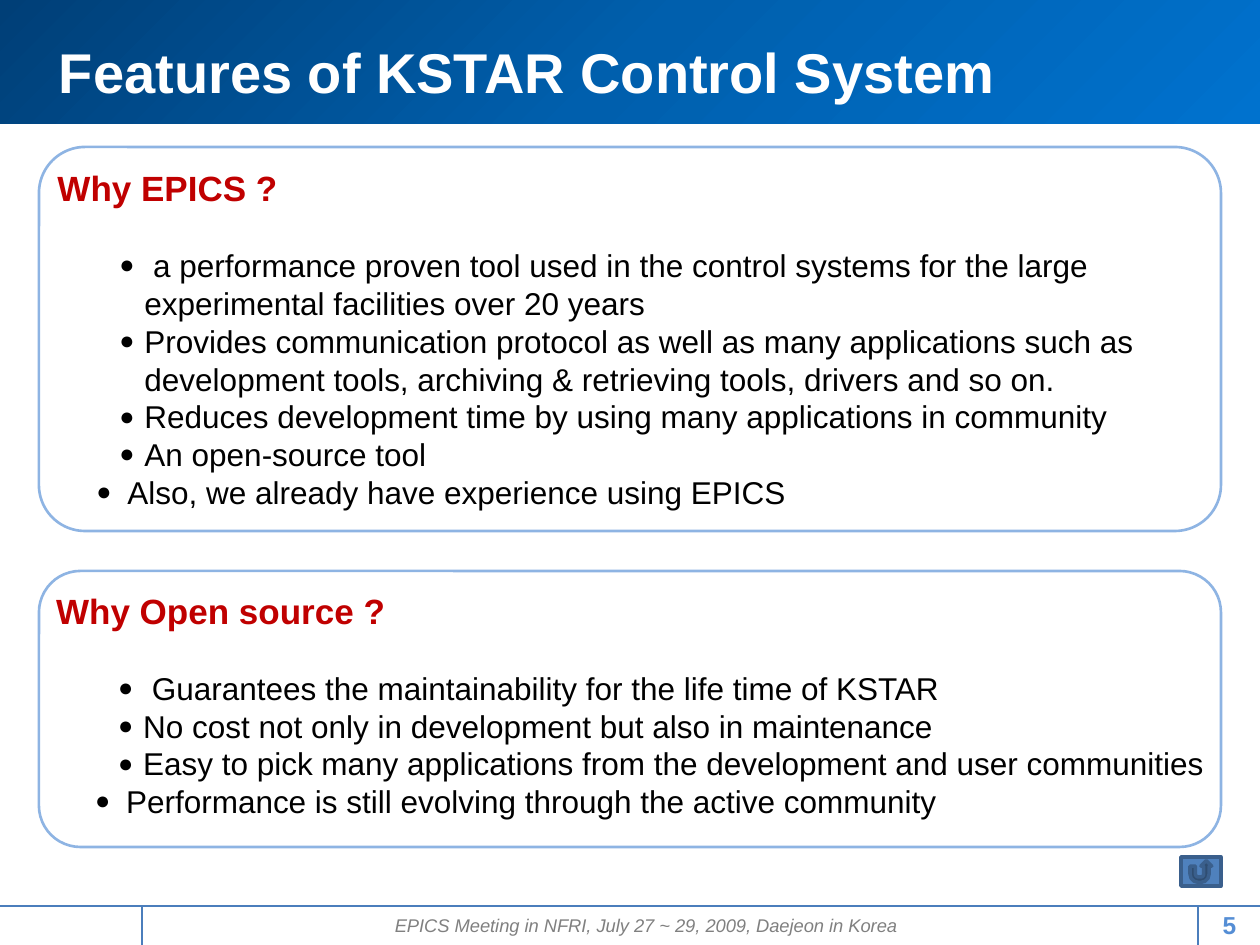
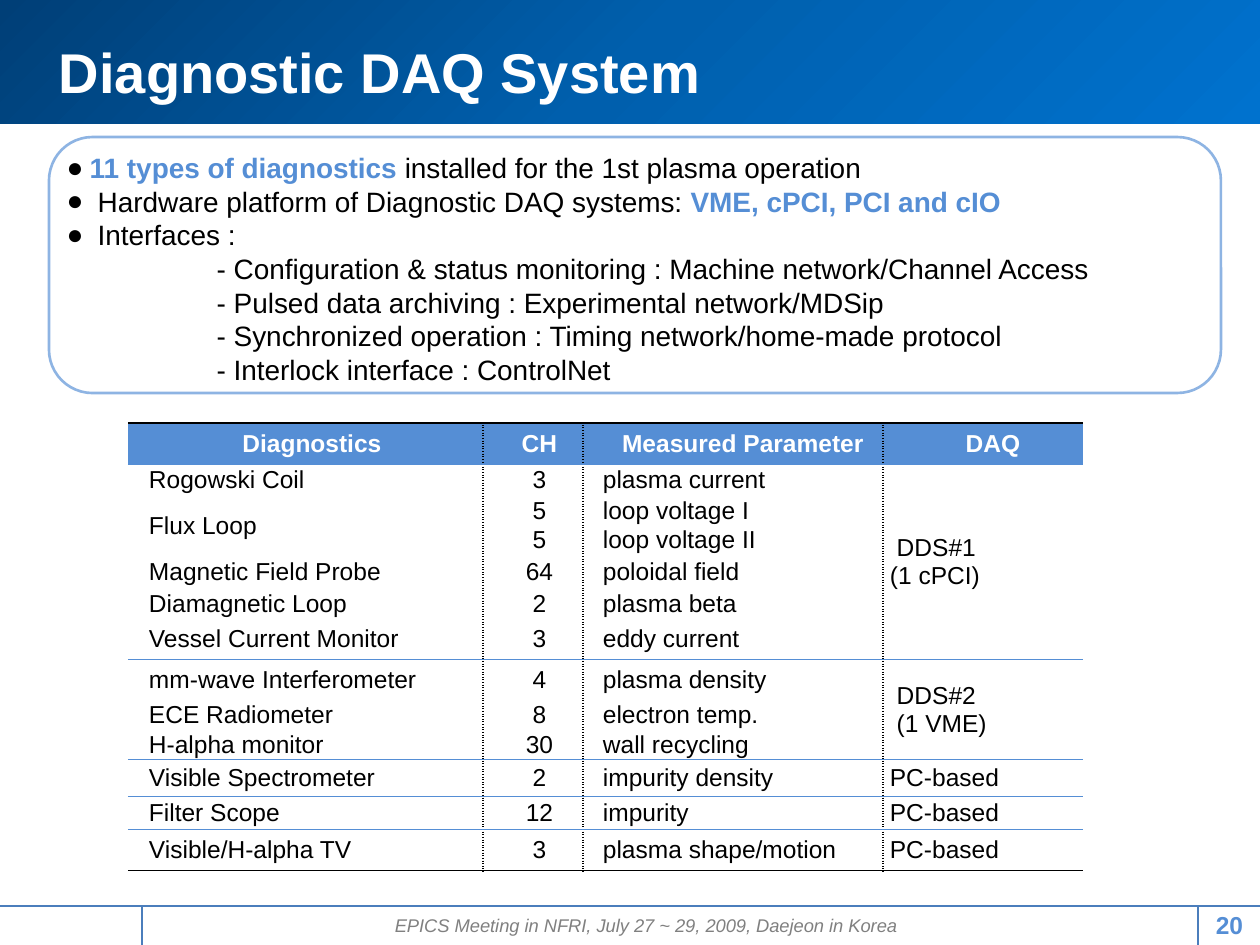
"""Builds two slides on the KSTAR control and data acquisition systems."""
from copy import deepcopy

from lxml.etree import SubElement
from pptx import Presentation
from pptx.dml.color import RGBColor
from pptx.enum.shapes import MSO_CONNECTOR, MSO_SHAPE
from pptx.enum.text import MSO_ANCHOR, MSO_AUTO_SIZE, PP_ALIGN
from pptx.oxml.ns import qn
from pptx.util import Inches, Pt

WHITE = RGBColor(0xFF, 0xFF, 0xFF)
BLACK = RGBColor(0x00, 0x00, 0x00)
RED = RGBColor(0xC0, 0x00, 0x00)
GRAY = RGBColor(0x80, 0x80, 0x80)
BLUE = RGBColor(0x55, 0x8E, 0xD5)
PANEL_LINE = RGBColor(0x8E, 0xB4, 0xE3)
FOOTER_LINE = RGBColor(0x4B, 0x7E, 0xBC)
BUTTON_FILL = RGBColor(0x4F, 0x81, 0xBD)
BUTTON_LINE = RGBColor(0x3A, 0x5F, 0x8C)
BAND_STOPS = [
    (0, RGBColor(0x00, 0x3F, 0x77)),
    (0.5, RGBColor(0x00, 0x5F, 0xAD)),
    (1, RGBColor(0x00, 0x72, 0xCE)),
]

FONT = "Arial"
SCALE = Inches(1) / 126
WIDTH, HEIGHT = 1260, 945
FOOTER_TOP = 906
FOOTER = "EPICS Meeting in NFRI, July 27 ~ 29, 2009, Daejeon in Korea"

EPICS_REASONS = [
    " a performance proven tool used in the control systems for the large "
    "experimental facilities over 20 years",
    "Provides communication protocol as well as many applications such as "
    "development tools, archiving & retrieving tools, drivers and so on.",
    "Reduces development time by using many applications in community",
    "An open-source tool",
    "Also, we already have experience using EPICS",
]
OPEN_SOURCE_REASONS = [
    " Guarantees the maintainability for the life time of KSTAR",
    "No cost not only in development but also in maintenance",
    "Easy to pick many applications from the development and user communities",
    "Performance is still evolving through the active community",
]
INTERFACES = [
    "- Configuration & status monitoring : Machine network/Channel Access",
    "- Pulsed data archiving : Experimental network/MDSip",
    "- Synchronized operation : Timing network/home-made protocol",
    "- Interlock interface : ControlNet",
]
DIAGNOSTICS = [
    ("Diagnostics", "CH", "Measured Parameter", "DAQ"),
    ("Rogowski Coil", "3", "plasma current", " DDS#1\n(1 cPCI)"),
    ("Flux Loop", "5", "loop voltage I", ""),
    ("", "5", "loop voltage II", ""),
    ("Magnetic Field Probe", "64", "poloidal field", ""),
    ("Diamagnetic Loop", "2", "plasma beta", ""),
    ("Vessel Current Monitor", "3", "eddy current", ""),
    ("mm-wave Interferometer", "4", "plasma density", " DDS#2\n (1 VME)"),
    ("ECE Radiometer", "8", "electron temp.", ""),
    ("H-alpha monitor", "30", "wall recycling", ""),
    ("Visible Spectrometer", "2", "impurity density", "PC-based"),
    ("Filter Scope", "12", "impurity", "PC-based"),
    ("Visible/H-alpha TV", "3", "plasma shape/motion", "PC-based"),
]
COLUMN_WIDTHS = [355, 100, 300, 200]
ROW_HEIGHTS = [41, 33, 29, 29, 35, 29, 41, 41, 29, 30, 37, 33, 41]
MERGES = [(2, 0, 3, 0), (1, 3, 6, 3), (7, 3, 9, 3)]
HEADER_INSETS = [13, 13, 20, 20]
BODY_INSETS = [21, 13, 20, 7]
DOTTED = (BLACK, 1, "sysDot")
EDGE = (BLACK, 1, "solid")
RULE = (BLUE, 0.5, "solid")
ROW_RULES = {0: EDGE, 1: RULE, 7: RULE, 10: RULE, 11: RULE, 12: RULE, 13: EDGE}


def px(length):
    """Turn px into EMU."""
    return round(length * SCALE)


class SlideBuilder:
    """Holds the shared style and the slide being drawn."""

    def __init__(self):
        """Open an empty deck of the right size."""
        self.deck = Presentation()
        self.deck.slide_width = px(WIDTH)
        self.deck.slide_height = px(HEIGHT)
        self.page = None

    def start(self, title, number):
        """Add a page with its band, title and footer."""
        self.page = self.deck.slides.add_slide(self.deck.slide_layouts[5])
        self.band()
        self.title(title)
        self.line(0, FOOTER_TOP, WIDTH, FOOTER_TOP)
        for x in (142, 1198):
            self.line(x, FOOTER_TOP, x, HEIGHT)
        self.label(383, 908, 527, 34, FOOTER, 10.5, GRAY, italic=True)
        self.label(1200, 905, 59, 39, number, 14, BLUE, bold=True)

    def shape(self, kind, left, top, width, height):
        """Add a preset shape without shadow."""
        box = self.page.shapes.add_shape(kind, px(left), px(top), px(width), px(height))
        box.shadow.inherit = False
        return box

    def band(self):
        """Draw the gradient title band."""
        box = self.shape(MSO_SHAPE.RECTANGLE, 0, 0, WIDTH, 124)
        box.line.fill.background()
        box.fill.gradient()
        box.fill.gradient_angle = 315
        stops = box.element.spPr.find(qn("a:gradFill")).find(qn("a:gsLst"))
        stops.insert(1, deepcopy(stops[0]))
        for stop, (position, color) in zip(box.fill.gradient_stops, BAND_STOPS):
            stop.position = position
            stop.color.rgb = color

    def title(self, text):
        """Fill the title placeholder and lift it above the band."""
        box = self.page.shapes.title
        box.left, box.top, box.width, box.height = 0, px(39), px(WIDTH), px(64)
        self.frame(box, (59, 0, 0, 0), MSO_ANCHOR.MIDDLE)
        para = self.para(box.text_frame, [(text, WHITE, True)], 32)
        para.alignment = PP_ALIGN.LEFT
        box.element.getparent().append(box.element)

    def line(self, x1, y1, x2, y2):
        """Draw a thin footer line."""
        rule = self.page.shapes.add_connector(
            MSO_CONNECTOR.STRAIGHT, px(x1), px(y1), px(x2), px(y2))
        rule.line.color.rgb = FOOTER_LINE
        rule.line.width = Pt(0.75)
        SubElement(rule.element.spPr, qn("a:effectLst"))

    def label(self, left, top, width, height, text, size, color, bold=False, italic=False):
        """Add a centred one-line text box."""
        box = self.page.shapes.add_textbox(px(left), px(top), px(width), px(height))
        self.frame(box, (0, 0, 0, 0), MSO_ANCHOR.MIDDLE)
        para = self.para(box.text_frame, [(text, color, bold)], size)
        para.alignment = PP_ALIGN.CENTER
        para.runs[0].font.italic = italic

    def panel(self, left, top, width, height, corner, top_inset):
        """Add a rounded outline and return its text frame."""
        box = self.shape(MSO_SHAPE.ROUNDED_RECTANGLE, left, top, width, height)
        box.adjustments[0] = corner
        box.fill.background()
        box.line.color.rgb = PANEL_LINE
        box.line.width = Pt(1.5)
        return self.frame(box, (5, top_inset, 0, 0), MSO_ANCHOR.TOP)

    def return_button(self, left, top, width, height):
        """Add the return button."""
        box = self.shape(MSO_SHAPE.ACTION_BUTTON_RETURN, left, top, width, height)
        box.fill.solid()
        box.fill.fore_color.rgb = BUTTON_FILL
        box.line.color.rgb = BUTTON_LINE
        box.line.width = Pt(2)

    def frame(self, box, insets, anchor):
        """Set up the text frame of a box."""
        frame = box.text_frame
        frame.word_wrap = True
        frame.auto_size = MSO_AUTO_SIZE.NONE
        frame.vertical_anchor = anchor
        (frame.margin_left, frame.margin_top,
         frame.margin_right, frame.margin_bottom) = map(px, insets)
        return frame

    def para(self, frame, spans, size, left=0, hang=0, bullet=0, leading=0):
        """Add a paragraph of (text, colour, bold) runs, with a bullet size in percent."""
        para = frame.paragraphs[0]
        if para.runs:
            para = frame.add_paragraph()
        para.alignment = PP_ALIGN.LEFT
        properties = para._p.get_or_add_pPr()
        properties.set("marL", str(px(left)))
        properties.set("indent", str(-px(hang)))
        if bullet:
            color = SubElement(properties, qn("a:buClr"))
            SubElement(color, qn("a:srgbClr"), val=str(BLACK))
            SubElement(properties, qn("a:buSzPct"), val=str(bullet * 1000))
            SubElement(properties, qn("a:buFont"), typeface=FONT)
            SubElement(properties, qn("a:buChar"), char="●")
        else:
            SubElement(properties, qn("a:buNone"))
        if leading:
            para.line_spacing = Pt(leading)
        for text, color, bold in spans:
            span = para.add_run()
            span.text = text
            span.font.name = FONT
            span.font.size = Pt(size)
            span.font.color.rgb = color
            span.font.bold = bold
        return para

    def reasons(self, top, height, corner, heading, items):
        """Add a panel with a red heading and bulleted reasons."""
        frame = self.panel(39, top, 1182, height, corner, 6)
        para = self.para(frame, [(heading, RED, True)], 20, leading=24)
        para.space_after = Pt(21.6)
        for item in items:
            left, hang = (70, 31) if item is items[-1] else (87, 25)
            self.para(frame, [(item, BLACK, False)], 18, left, hang, 80, 21.6)

    def border(self, cell, side, style):
        """Draw one cell edge, or clear it when there is no style."""
        properties = cell._tc.get_or_add_tcPr()
        edge = SubElement(properties, qn(f"a:ln{side}"))
        if style is None:
            edge.set("w", "0")
            SubElement(edge, qn("a:noFill"))
            return
        color, width, dash = style
        edge.set("w", str(Pt(width)))
        fill = SubElement(edge, qn("a:solidFill"))
        SubElement(fill, qn("a:srgbClr"), val=str(color))
        SubElement(edge, qn("a:prstDash"), val=dash)

    def table(self, left, top, rows):
        """Add the table of diagnostics."""
        table = self.page.shapes.add_table(
            len(rows), len(COLUMN_WIDTHS), px(left), px(top),
            px(sum(COLUMN_WIDTHS)), px(sum(ROW_HEIGHTS))).table
        table.first_row = table.horz_banding = False
        for column, width in zip(table.columns, COLUMN_WIDTHS):
            column.width = px(width)
        for row, height in zip(table.rows, ROW_HEIGHTS):
            row.height = px(height)
        for top_row, left_column, bottom_row, right_column in MERGES:
            table.cell(top_row, left_column).merge(table.cell(bottom_row, right_column))
        for r, row in enumerate(rows):
            for c, text in enumerate(row):
                self.cell(table.cell(r, c), r, c, text)

    def cell(self, cell, r, c, text):
        """Format and fill one table cell."""
        header = r == 0
        bottom = r + (cell.span_height if cell.is_merge_origin else 1)
        self.border(cell, "L", DOTTED if c else None)
        self.border(cell, "R", DOTTED if c < len(COLUMN_WIDTHS) - 1 else None)
        self.border(cell, "T", ROW_RULES.get(r))
        self.border(cell, "B", ROW_RULES.get(bottom))
        cell.fill.solid()
        cell.fill.fore_color.rgb = BLUE if header else WHITE
        cell.vertical_anchor = MSO_ANCHOR.MIDDLE
        cell.margin_top = cell.margin_right = cell.margin_bottom = 0
        cell.margin_left = px((HEADER_INSETS if header else BODY_INSETS)[c])
        if cell.is_spanned:
            return
        for part in text.split("\n"):
            span = (part, WHITE if header else BLACK, header)
            para = self.para(cell.text_frame, [span], 14)
            if header or c == 1:
                para.alignment = PP_ALIGN.CENTER


def features_slide(builder):
    """Draw the slide on the choice of EPICS and open source."""
    builder.start("Features of KSTAR Control System", "5")
    builder.reasons(147, 384, 0.12, "Why EPICS ?", EPICS_REASONS)
    builder.reasons(571, 276, 0.15, "Why Open source ?", OPEN_SOURCE_REASONS)
    builder.return_button(1181, 857, 40, 29)


def diagnostics_slide(builder):
    """Draw the slide on the diagnostic systems."""
    builder.start("Diagnostic DAQ System", "20")
    builder.table(128, 423, DIAGNOSTICS)
    frame = builder.panel(49, 137, 1172, 256, 0.17, 1)
    bullets = [
        (23, [("11 types of diagnostics ", BLUE, True),
              ("installed for the 1st plasma operation", BLACK, False)]),
        (31, [("Hardware platform of Diagnostic DAQ systems: ", BLACK, False),
              ("VME, cPCI, PCI and cIO", BLUE, True)]),
        (31, [("Interfaces :", BLACK, False)]),
    ]
    for left, spans in bullets:
        builder.para(frame, spans, 16, left, left, 100, 19.2)
    for item in INTERFACES:
        builder.para(frame, [(item, BLACK, False)], 16, 150, leading=19.2)


def main():
    """Build and save the deck."""
    builder = SlideBuilder()
    features_slide(builder)
    diagnostics_slide(builder)
    builder.deck.save("out.pptx")


if __name__ == "__main__":
    main()
